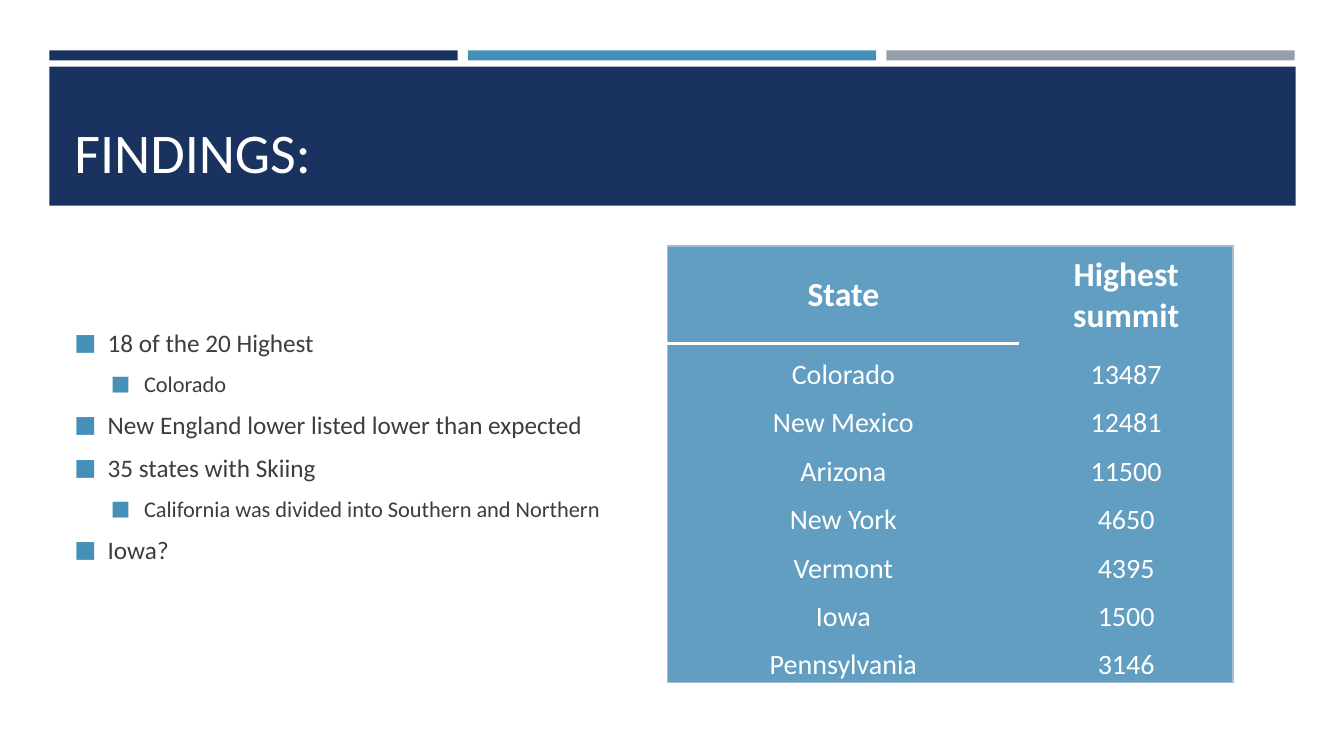
from lxml import etree
from pptx import Presentation
from pptx import util as u
from pptx.dml.color import RGBColor
from pptx.enum import shapes, text
from pptx.oxml import ns

NAVY, BLUE, GREY, TABLE_BLUE = "1A3260", "4590B8", "969FA7", "629EC1"
WHITE, INK, BORDER = "FFFFFF", "3D3D3D", "A6BDD1"
NO_STYLE = "{2D5ABB26-0587-4C30-8999-92F81FD0307C}"
FINDINGS = [
    (0, "18 of the 20 Highest"),
    (1, "Colorado"),
    (0, "New England lower listed lower than expected"),
    (0, "35 states with Skiing"),
    (1, "California was divided into Southern and Northern"),
    (0, "Iowa?"),
]
SUMMITS = [
    ("State", "Highest summit"),
    ("Colorado", "13487"),
    ("New Mexico", "12481"),
    ("Arizona", "11500"),
    ("New York", "4650"),
    ("Vermont", "4395"),
    ("Iowa", "1500"),
    ("Pennsylvania", "3146"),
]


def color(value):
    """Turn a hex string into a colour."""
    return RGBColor.from_string(value)


def add_xml(parent, tag, **attributes):
    """Append a DrawingML element to its parent."""
    return etree.SubElement(parent, ns.qn(tag), attributes)


class FindingsSlide:
    """Hold the slide and its font, and draw each kind of element."""

    def __init__(self, slide, font="Calibri"):
        """Keep the slide and the font."""
        self.slide = slide
        self.font = font

    def style(self, paragraph, size, fill, bold=False):
        """Format the runs of a paragraph."""
        for run in paragraph.runs:
            run.font.name = self.font
            run.font.size = u.Pt(size)
            run.font.bold = bold
            run.font.color.rgb = color(fill)

    def bar(self, left, top, width, height, fill):
        """Draw a plain filled rectangle."""
        shape = self.slide.shapes.add_shape(
            shapes.MSO_SHAPE.RECTANGLE, *map(u.Inches, (left, top, width, height)))
        shape.shadow.inherit = False
        shape.fill.solid()
        shape.fill.fore_color.rgb = color(fill)
        shape.line.fill.background()

    def text_box(self, left, top, width, height, anchor):
        """Add a wrapping text box and return its text frame."""
        shape = self.slide.shapes.add_textbox(
            *map(u.Inches, (left, top, width, height)))
        shape.text_frame.word_wrap = True
        shape.text_frame.vertical_anchor = anchor
        return shape.text_frame

    def title(self, wording):
        """Write the slide title."""
        frame = self.text_box(0.64, 0.8, 12.06, 1.08, text.MSO_ANCHOR.BOTTOM)
        frame.text = wording
        self.style(frame.paragraphs[0], 40, WHITE)

    def bullets(self, items):
        """Write the two-level bulleted list."""
        frame = self.text_box(0.64, 2.44, 5.93, 3.97, text.MSO_ANCHOR.MIDDLE)
        frame.text = "\n".join(wording for _, wording in items)
        for paragraph, (level, _) in zip(frame.paragraphs, items):
            paragraph.level = level
            paragraph.space_before = u.Pt(3)
            paragraph.space_after = u.Pt(6)
            self.style(paragraph, 18 - 2 * level, INK)
            properties = paragraph._p.get_or_add_pPr()
            properties.set("marL", str(u.Inches(0.33 + 0.36 * level)))
            properties.set("indent", str(u.Inches(-0.33)))
            add_xml(add_xml(properties, "a:buClr"), "a:srgbClr", val=BLUE)
            add_xml(properties, "a:buSzPct", val="92000")
            add_xml(properties, "a:buFont", typeface=self.font)
            add_xml(properties, "a:buChar", char="■")

    def borders(self, cell, lines):
        """Put the given border lines before the fill of a cell."""
        properties = cell._tc.get_or_add_tcPr()
        for position, (side, fill, width) in enumerate(lines):
            line = add_xml(properties, f"a:ln{side}", w=str(u.Pt(width)))
            add_xml(add_xml(line, "a:solidFill"), "a:srgbClr", val=fill)
            properties.insert(position, line)

    def cell(self, cell, wording, header):
        """Fill in and format one table cell."""
        cell.text = wording
        cell.fill.solid()
        cell.fill.fore_color.rgb = color(TABLE_BLUE)
        cell.margin_left = cell.margin_right = cell.margin_top = u.Inches(0.01)
        cell.margin_bottom = 0
        cell.vertical_anchor = (
            text.MSO_ANCHOR.MIDDLE if header else text.MSO_ANCHOR.BOTTOM)
        paragraph = cell.text_frame.paragraphs[0]
        paragraph.alignment = text.PP_ALIGN.CENTER
        self.style(paragraph, 24 if header else 20, WHITE, header)

    def table(self, rows):
        """Draw the table of summits with its outline and header rule."""
        table = self.slide.shapes.add_table(
            len(rows), 2, *map(u.Inches, (6.62, 2.44, 5.61, 4.36))).table
        table._tbl.tblPr.find(ns.qn("a:tableStyleId")).text = NO_STYLE
        table.horz_banding = False
        for column, width in zip(table.columns, (3.49, 2.12)):
            column.width = u.Inches(width)
        last = len(rows) - 1
        for i, row in enumerate(rows):
            table.rows[i].height = u.Inches(0.48 if i else 0.97)
            for j, wording in enumerate(row):
                cell = table.cell(i, j)
                self.cell(cell, wording, i == 0)
                lines = [("R" if j else "L", BORDER, 1)]
                if i == 0:
                    lines.append(("T", BORDER, 1))
                if i == 0 and j == 0:
                    lines.append(("B", WHITE, 2))
                if i == last:
                    lines.append(("B", BORDER, 1))
                self.borders(cell, lines)


def main():
    """Build the slide and save it."""
    presentation = Presentation()
    presentation.slide_width = u.Inches(13.33)
    presentation.slide_height = u.Inches(7.5)
    page = FindingsSlide(
        presentation.slides.add_slide(presentation.slide_layouts[6]))
    for i, fill in enumerate((NAVY, BLUE, GREY)):
        page.bar(0.49 + 4.15 * i, 0.5, 4.05, 0.1, fill)
    page.bar(0.49, 0.66, 12.36, 1.38, NAVY)
    page.title("FINDINGS:")
    page.bullets(FINDINGS)
    page.table(SUMMITS)
    presentation.save("out.pptx")


if __name__ == "__main__":
    main()
